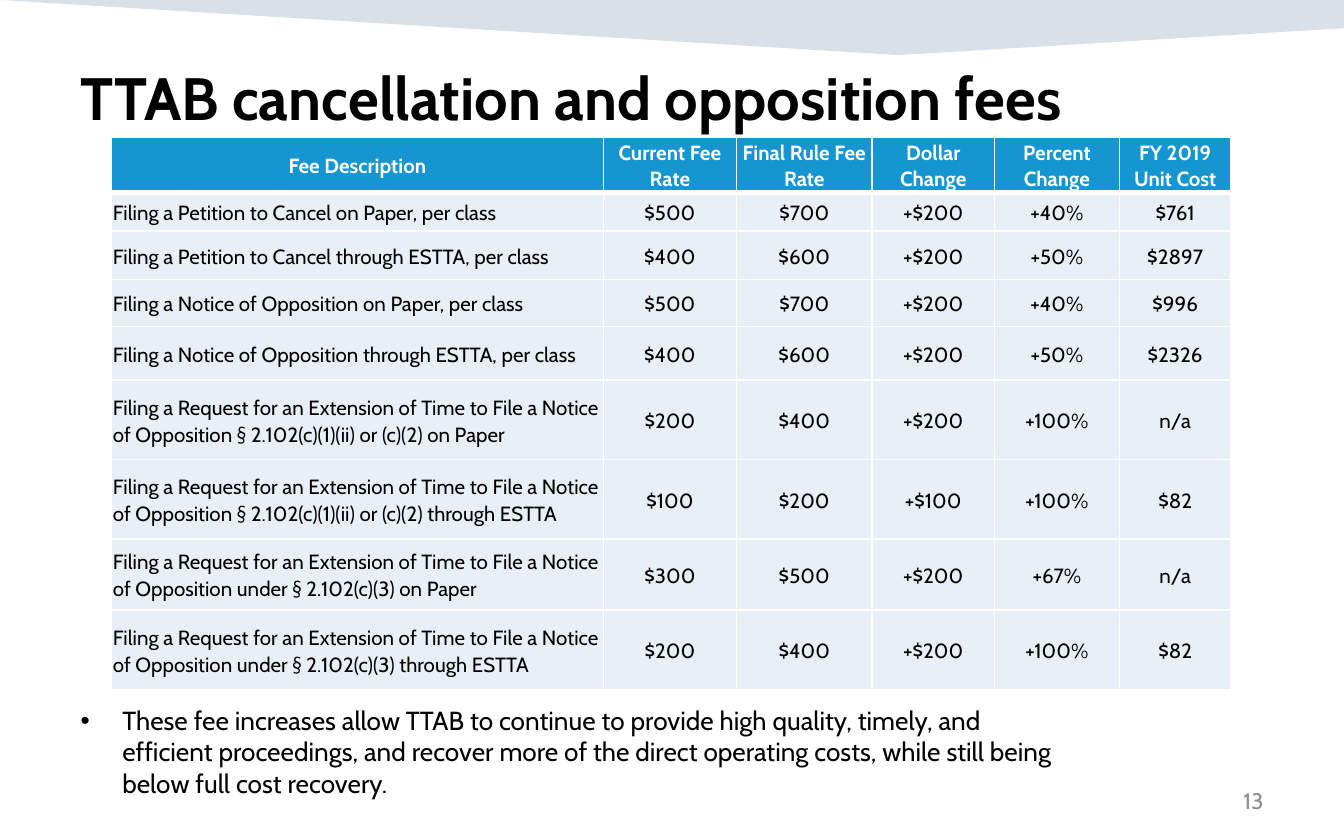
from typing import NamedTuple

from lxml.etree import SubElement
from pptx import Presentation
from pptx.dml.color import RGBColor
from pptx.enum.text import MSO_ANCHOR as Anchor, MSO_AUTO_SIZE as AutoSize, PP_ALIGN as Align
from pptx.oxml.ns import qn
from pptx.util import Inches, Pt

FONT = "Cabin"
NAVY = RGBColor(0x00, 0x38, 0x65)
BLUE = RGBColor(0x15, 0x96, 0xD1)
PALE = RGBColor(0xE8, 0xEF, 0xF7)
GRAY = RGBColor(0x8C, 0x8C, 0x8C)
BLACK = RGBColor(0, 0, 0)
WHITE = RGBColor(255, 255, 255)


class Fee(NamedTuple):
    height: float
    description: str
    current: str
    final: str
    dollars: str
    percent: str
    unit_cost: str


NOTICE = "Filing a Request for an Extension of Time to File a Notice of Opposition"
COL_WIDTHS = [3.66, 0.99, 1.01, 0.91, 0.93, 0.83]
FEES = [
    Fee(0.41, "Fee Description", "Current Fee Rate", "Final Rule Fee Rate",
        "Dollar Change", "Percent Change", "FY 2019 Unit Cost"),
    Fee(0.29, "Filing a Petition to Cancel on Paper, per class",
        "$500", "$700", "+$200", "+40%", "$761"),
    Fee(0.36, "Filing a Petition to Cancel through ESTTA, per class",
        "$400", "$600", "+$200", "+50%", "$2897"),
    Fee(0.35, "Filing a Notice of Opposition on Paper, per class",
        "$500", "$700", "+$200", "+40%", "$996"),
    Fee(0.4, "Filing a Notice of Opposition through ESTTA, per class",
        "$400", "$600", "+$200", "+50%", "$2326"),
    Fee(0.59, f"{NOTICE} § 2.102(c)(1)(ii) or (c)(2) on Paper",
        "$200", "$400", "+$200", "+100%", "n/a"),
    Fee(0.59, f"{NOTICE} § 2.102(c)(1)(ii) or (c)(2) through ESTTA",
        "$100", "$200", "+$100", "+100%", "$82"),
    Fee(0.53, f"{NOTICE} under § 2.102(c)(3) on Paper",
        "$300", "$500", "+$200", "+67%", "n/a"),
    Fee(0.59, f"{NOTICE} under § 2.102(c)(3) through ESTTA",
        "$200", "$400", "+$200", "+100%", "$82"),
]


def place(sp, left: float, top: float, width: float, height: float) -> None:
    sp.left, sp.top = Inches(left), Inches(top)
    sp.width, sp.height = Inches(width), Inches(height)


def write(tf, text: str, size: float, color: RGBColor, align=Align.LEFT,
          anchor=Anchor.TOP, bold: bool = False):
    tf.text = text
    tf.word_wrap = True
    tf.vertical_anchor = anchor
    p = tf.paragraphs[0]
    p.alignment = align
    p.space_before = Pt(0)
    for r in p.runs:
        r.font.name, r.font.size, r.font.bold = FONT, Pt(size), bold
        r.font.color.rgb = color
    return p


def add_bullet(p, indent: float) -> None:
    pPr = p._p.get_or_add_pPr()
    pPr.set("marL", str(Inches(indent)))
    pPr.set("indent", str(-Inches(indent)))
    SubElement(pPr, qn("a:buFont"), typeface="Arial")
    SubElement(pPr, qn("a:buChar"), char="•")


def add_borders(cell, row: int) -> None:
    widths = {"L": 1, "R": 1, "T": 3 if row == 1 else 1, "B": 3 if row == 0 else 1}
    tcPr = cell._tc.get_or_add_tcPr()
    for side, width in widths.items():
        ln = SubElement(tcPr, qn(f"a:ln{side}"), w=str(Pt(width)))
        fill = SubElement(ln, qn("a:solidFill"))
        SubElement(fill, qn("a:srgbClr"), val=str(WHITE))


def format_cell(cell, text: str, row: int, col: int) -> None:
    header = row == 0
    add_borders(cell, row)
    cell.fill.solid()
    cell.fill.fore_color.rgb = BLUE if header else PALE
    cell.margin_left = cell.margin_right = cell.margin_top = Inches(0.01)
    cell.margin_bottom = 0
    align = Align.CENTER if header or col else Align.LEFT
    p = write(cell.text_frame, text, 11, WHITE if header else BLACK, align, bold=header)
    cell.vertical_anchor = Anchor.MIDDLE
    p.line_spacing = 1.07
    p.space_after = Pt(8)


def add_fee_table(s) -> None:
    frame = s.shapes.add_table(len(FEES), len(COL_WIDTHS), Inches(0.83), Inches(1.02),
                               Inches(sum(COL_WIDTHS)), Inches(sum(f.height for f in FEES)))
    table = frame.table
    table.horz_banding = False
    for column, width in zip(table.columns, COL_WIDTHS):
        column.width = Inches(width)
    for row, fee in enumerate(FEES):
        table.rows[row].height = Inches(fee.height)
        for col, text in enumerate(fee[1:]):
            format_cell(table.cell(row, col), text, row, col)


def add_band(s):
    builder = s.shapes.build_freeform(0, 0)
    points = [(10, 0), (10, 0.21), (6.69, 0.41)]
    builder.add_line_segments([(Inches(x), Inches(y)) for x, y in points], close=True)
    band = builder.convert_to_shape()
    band.shadow.inherit = False
    band.line.fill.background()
    band.fill.solid()
    band.fill.fore_color.rgb = NAVY
    color = next(band.element.spPr.iter(qn("a:srgbClr")))
    SubElement(color, qn("a:alpha"), val="15000")
    return band


def main() -> None:
    prs = Presentation()
    prs.slide_width, prs.slide_height = Inches(10), Inches(6.25)
    s = prs.slides.add_slide(prs.slide_layouts[1])

    title, body = s.shapes.title, s.placeholders[1]
    title.element.addprevious(add_band(s).element)
    place(title, 0.5, 0.4, 9, 0.97)
    write(title.text_frame, "TTAB cancellation and opposition fees", 32, BLACK, bold=True)

    place(body, 0.5, 5.19, 7.58, 1.11)
    p = write(body.text_frame,
              "These fee increases allow TTAB to continue to provide high quality, timely, and "
              "efficient proceedings, and recover more of the direct operating costs, while "
              "still being below full cost recovery.", 14, BLACK)
    add_bullet(p, 0.31)
    body.text_frame.auto_size = AutoSize.SHAPE_TO_FIT_TEXT

    add_fee_table(s)

    number = s.shapes.add_textbox(Inches(7.17), Inches(5.79), Inches(2.33), Inches(0.33))
    write(number.text_frame, "13", 12, GRAY, Align.RIGHT, Anchor.MIDDLE)

    prs.save("out.pptx")


if __name__ == "__main__":
    main()
